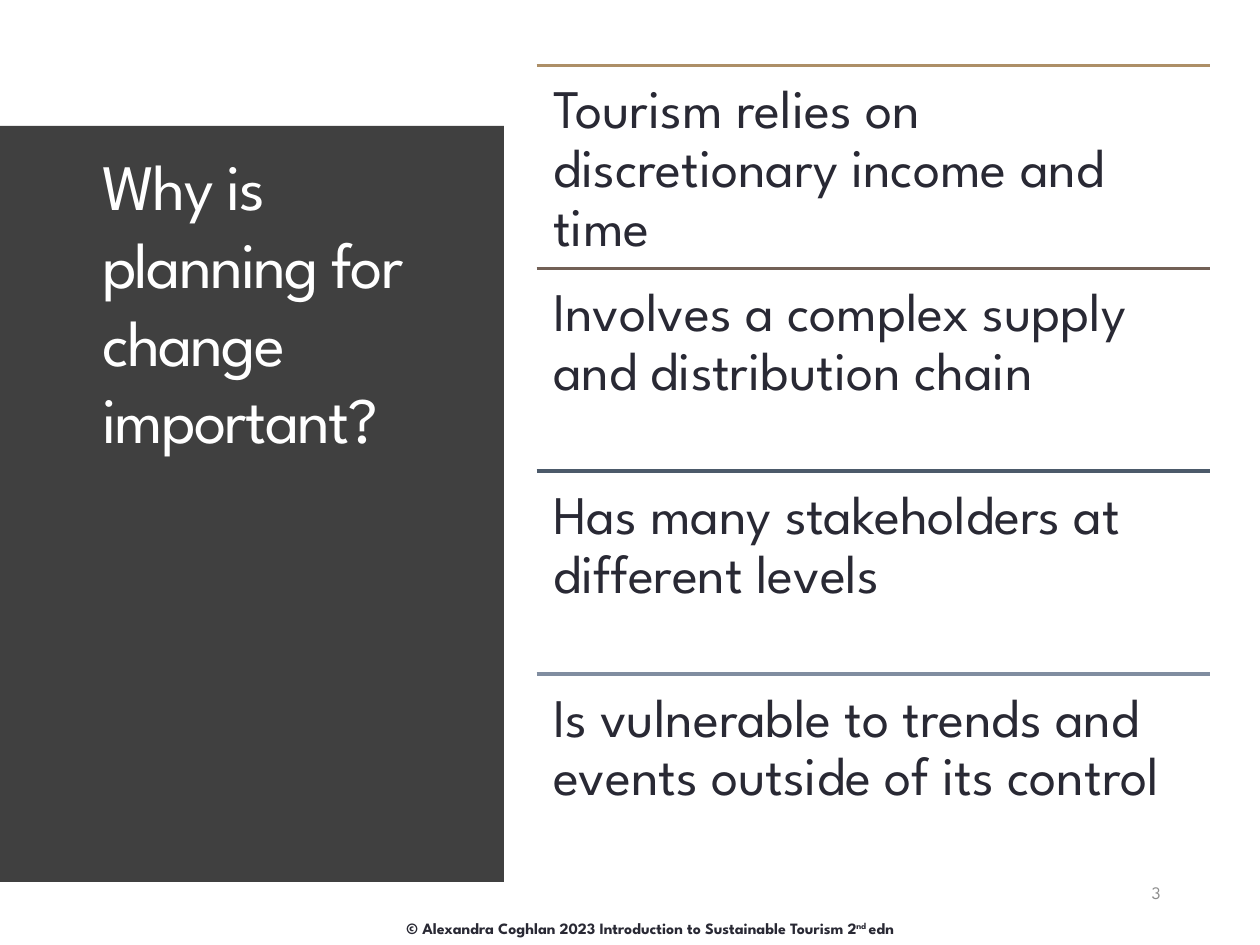
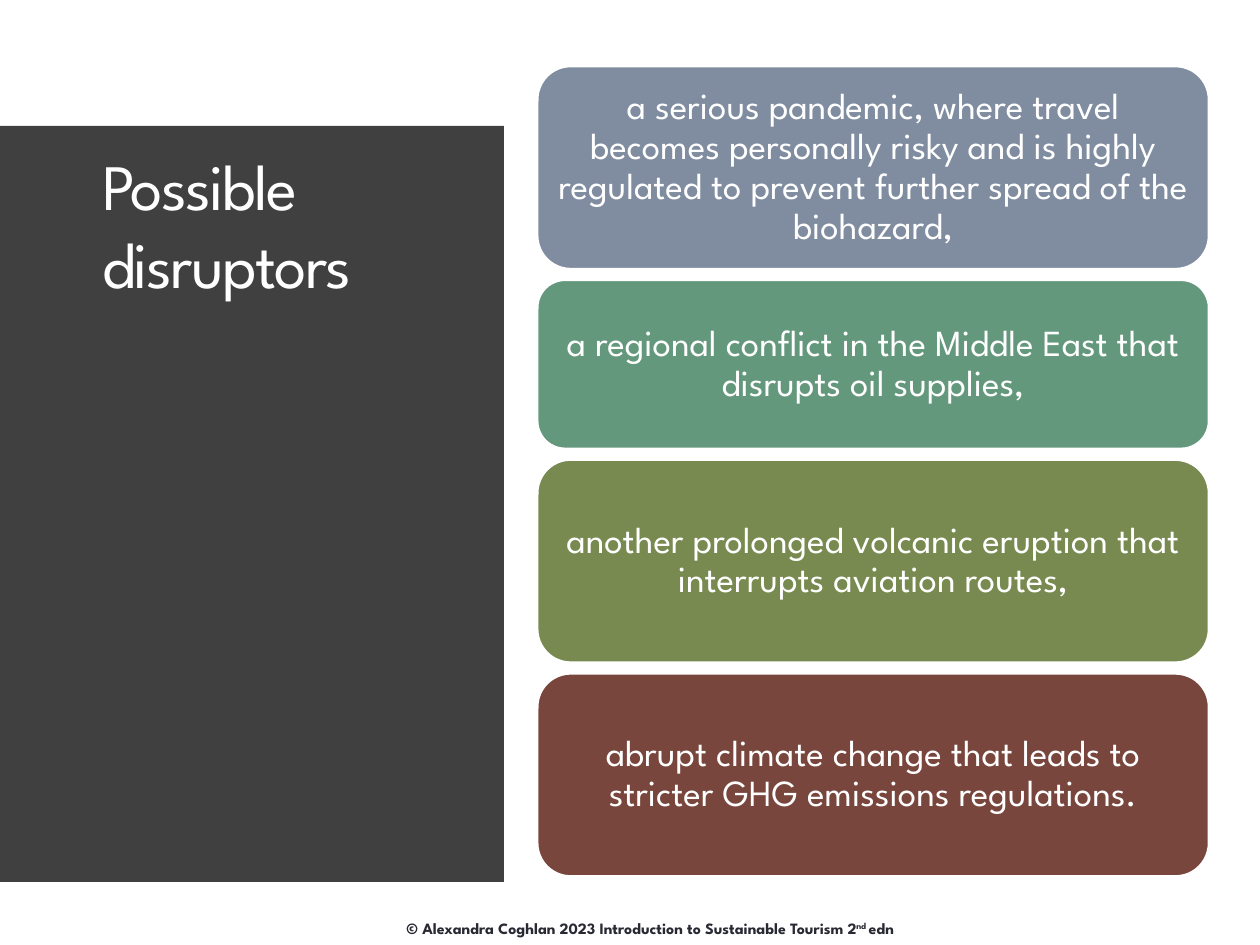
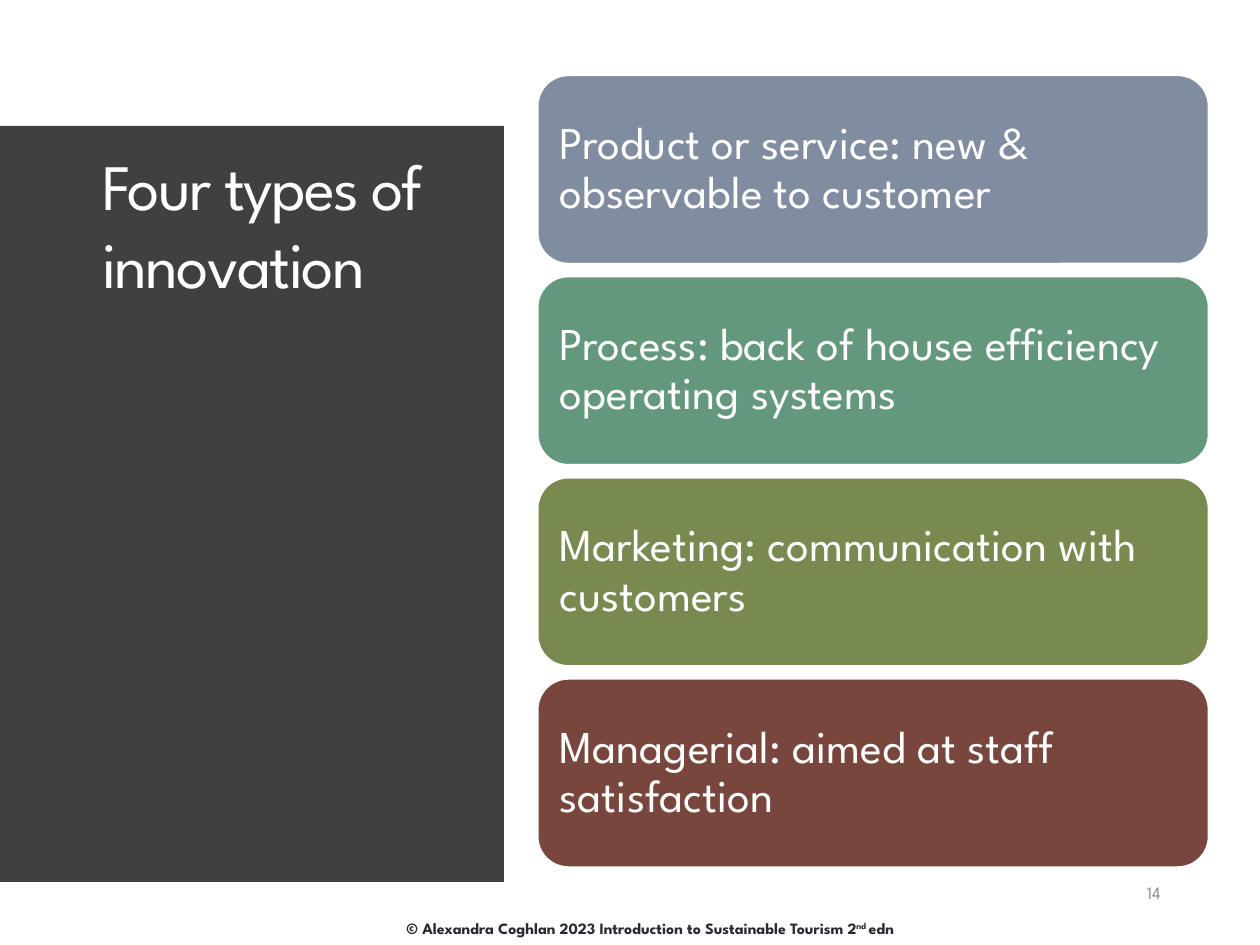
from lxml import etree
from pptx import Presentation
from pptx.dml.color import RGBColor
from pptx.enum.shapes import MSO_CONNECTOR, MSO_SHAPE
from pptx.enum.text import MSO_ANCHOR, MSO_AUTO_SIZE, PP_ALIGN
from pptx.oxml.ns import qn
from pptx.util import Inches, Pt

FONT = "League Spartan"
WHITE = RGBColor(0xFF, 0xFF, 0xFF)
INK = RGBColor(0x29, 0x29, 0x34)
CHARCOAL = RGBColor(0x40, 0x40, 0x40)
GREY = RGBColor(0x8C, 0x8C, 0x8C)
SLATE = RGBColor(0x80, 0x8D, 0xA0)
RULE_COLORS = [RGBColor(0xAD, 0x8F, 0x67), RGBColor(0x72, 0x60, 0x56),
               RGBColor(0x4C, 0x5A, 0x6A), SLATE]
CARD_COLORS = [SLATE, RGBColor(0x64, 0x98, 0x7C),
               RGBColor(0x78, 0x8A, 0x50), RGBColor(0x79, 0x46, 0x3D)]

TOP, HEIGHT = 0.52, 6.44
PANEL_LEFT, PANEL_RIGHT, BULGE, STEPS = 0.4, 3.81, 0.18, 48
COL_LEFT, COL_WIDTH = 4.26, 5.34
ROW = HEIGHT / 4

REASONS = ["Tourism relies on discretionary income and time",
           "Involves a complex supply and distribution chain",
           "Has many stakeholders at different levels",
           "Is vulnerable to trends and events outside of its control"]
DISRUPTORS = ["a serious pandemic, where travel becomes personally risky and is highly "
              "regulated to prevent further spread of the biohazard,",
              "a regional conflict in the Middle East that disrupts oil supplies,",
              "another prolonged volcanic eruption that interrupts aviation routes,",
              "abrupt climate change that leads to stricter GHG emissions regulations."]
INNOVATIONS = ["Product or service: new & observable to customer",
               "Process: back of house efficiency operating systems",
               "Marketing: communication with customers",
               "Managerial: aimed at staff satisfaction"]


def set_text(sp, text, size, color, align=PP_ALIGN.LEFT, anchor=MSO_ANCHOR.TOP,
             inset=(0.1, 0.05), spacing=1.0):
    tf = sp.text_frame
    tf.word_wrap = True
    tf.auto_size = MSO_AUTO_SIZE.NONE
    tf.vertical_anchor = anchor
    tf.margin_left = tf.margin_right = Inches(inset[0])
    tf.margin_top = tf.margin_bottom = Inches(inset[1])
    p = tf.paragraphs[0]
    p.add_run().text = text
    p.alignment = align
    p.line_spacing = spacing
    p.font.name = FONT
    p.font.size = Pt(size)
    p.font.color.rgb = color
    return p


def add_slide(title, number):
    s = prs.slides.add_slide(prs.slide_layouts[5])
    curve = []
    for i in range(STEPS + 1):
        t = i / STEPS
        curve.append((PANEL_RIGHT + BULGE * 4 * t * (1 - t), TOP + HEIGHT * t))
    builder = s.shapes.build_freeform(PANEL_LEFT, TOP, scale=Inches(1))
    builder.add_line_segments(curve + [(PANEL_LEFT, TOP + HEIGHT)])
    panel = builder.convert_to_shape()
    panel.shadow.inherit = False
    panel.fill.solid()
    panel.fill.fore_color.rgb = CHARCOAL
    panel.line.fill.background()

    heading = s.shapes.title
    panel._element.addnext(heading._element)
    heading.left, heading.top = Inches(0.71), Inches(1.11)
    heading.width, heading.height = Inches(2.8), Inches(5.24)
    p = set_text(heading, title, 37, WHITE)
    p.runs[0]._r.get_or_add_rPr().set("spc", "-100")

    footer = s.shapes.add_textbox(Inches(2.8), Inches(7.24), Inches(4.72), Inches(0.25))
    p = set_text(footer, "© Alexandra Coghlan 2023 Introduction to Sustainable Tourism 2",
                 9, INK, PP_ALIGN.CENTER)
    p.font.bold = True
    r = p.add_run()
    r.text = "nd "
    r._r.get_or_add_rPr().set("baseline", "30000")
    p.add_run().text = "edn"

    if number:
        box = s.shapes.add_textbox(Inches(8.8), Inches(6.95), Inches(0.51), Inches(0.4))
        set_text(box, number, 10, GREY, PP_ALIGN.RIGHT)
    return s


prs = Presentation()
prs.slide_width, prs.slide_height = Inches(10), Inches(7.5)

s = add_slide("Why is planning for change important?", "3")
for i, (reason, color) in enumerate(zip(REASONS, RULE_COLORS)):
    y = Inches(TOP + i * ROW)
    rule = s.shapes.add_connector(MSO_CONNECTOR.STRAIGHT, Inches(COL_LEFT), y,
                                  Inches(COL_LEFT + COL_WIDTH), y)
    rule.line.color.rgb = color
    rule.line.width = Pt(2.08)
    etree.SubElement(rule._element.spPr, qn("a:effectLst"))
    box = s.shapes.add_textbox(Inches(COL_LEFT), y, Inches(COL_WIDTH), Inches(ROW))
    set_text(box, reason, 31, INK, inset=(0.13, 0.13), spacing=0.9)

card_slides = [
    ("Possible disruptors", None, DISRUPTORS, [1.62, 1.35, 1.62, 1.62],
     TOP, 21, PP_ALIGN.CENTER, (0.09, 0.04)),
    ("Four types of innovation", "14", INNOVATIONS, [1.51] * 4,
     0.59, 26, PP_ALIGN.LEFT, (0.11, 0.11)),
]
for title, number, texts, heights, top, size, align, inset in card_slides:
    s = add_slide(title, number)
    gap = (HEIGHT - 2 * (top - TOP) - sum(heights)) / 3
    y = top
    for text, height, color in zip(texts, heights, CARD_COLORS):
        card = s.shapes.add_shape(MSO_SHAPE.ROUNDED_RECTANGLE, Inches(COL_LEFT), Inches(y),
                                  Inches(COL_WIDTH), Inches(height))
        card.shadow.inherit = False
        card.fill.solid()
        card.fill.fore_color.rgb = color
        card.line.color.rgb = WHITE
        card.line.width = Pt(2.08)
        set_text(card, text, size, WHITE, align, MSO_ANCHOR.MIDDLE, inset, 0.9)
        y += height + gap

prs.save("out.pptx")
